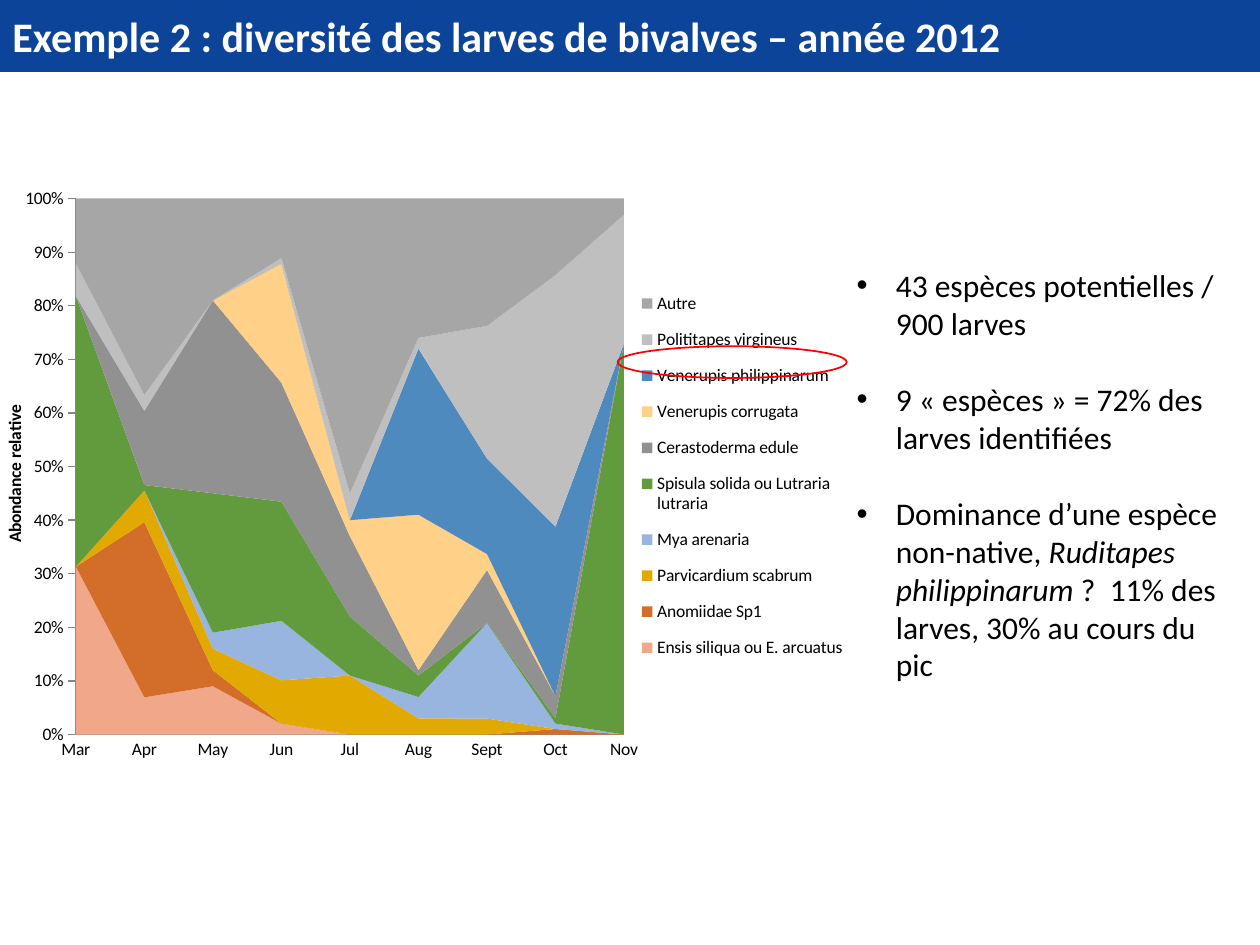
import pptx
import pptx.chart.data
import pptx.dml.color
import pptx.enum.chart
import pptx.enum.shapes
import pptx.enum.text
import pptx.oxml
import pptx.oxml.ns
import pptx.util

Cm = pptx.util.Cm
Pt = pptx.util.Pt
qn = pptx.oxml.ns.qn
SHAPES = pptx.enum.shapes.MSO_SHAPE
MIDDLE = pptx.enum.text.MSO_ANCHOR.MIDDLE
LEFT = pptx.enum.text.PP_ALIGN.LEFT


def rgb(value):
    return pptx.dml.color.RGBColor.from_string(value)


def manual_layout(x, y, w, h, inner=False):
    """Return a c:layout element; lengths are fractions of the chart."""
    target = '<c:layoutTarget val="inner"/>' if inner else ""
    return pptx.oxml.parse_xml(
        f'<c:layout {pptx.oxml.ns.nsdecls("c")}><c:manualLayout>{target}'
        '<c:xMode val="edge"/><c:yMode val="edge"/>'
        f'<c:x val="{x}"/><c:y val="{y}"/><c:w val="{w}"/><c:h val="{h}"/>'
        "</c:manualLayout></c:layout>")


deck = pptx.Presentation()
deck.slide_width, deck.slide_height = Cm(25.4), Cm(19.05)
slide = deck.slides.add_slide(deck.slide_layouts[6])

# Relative abundance per month
species = [
    ("Ensis siliqua ou E. arcuatus", "F1A78A", [31, 7, 9, 2, 0, 0, 0, 0, 0]),
    ("Anomiidae Sp1", "D26E2A", [0, 33, 3, 0, 0, 0, 0, 1, 0]),
    ("Parvicardium scabrum", "E2AA00", [0, 6, 4, 8, 11, 3, 3, 0, 0]),
    ("Mya arenaria", "97B5DF", [0, 0, 3, 11, 0, 4, 18, 1, 0]),
    ("Spisula solida ou Lutraria lutraria", "629A3E", [50, 1, 26, 22, 11, 4, 0, 1, 73]),
    ("Cerastoderma edule", "919191", [0, 14, 36, 22, 15, 1, 10, 4, 0]),
    ("Venerupis corrugata", "FFD088", [0, 0, 0, 22, 3, 29, 3, 0, 0]),
    ("Venerupis philippinarum", "4E8ABE", [0, 0, 0, 0, 0, 31, 18, 31, 0]),
    ("Polititapes virgineus", "BFBFBF", [6, 3, 0, 1, 5, 2, 25, 46, 24]),
    ("Autre", "A6A6A6", [12, 37, 19, 11, 55, 26, 24, 14, 3]),
]
abundance = pptx.chart.data.CategoryChartData()
abundance.categories = ["Mar", "Apr", "May", "Jun", "Jul", "Aug", "Sept", "Oct", "Nov"]
for name, _, shares in species:
    abundance.add_series(name, shares)
chart = slide.shapes.add_chart(
    pptx.enum.chart.XL_CHART_TYPE.AREA_STACKED_100,
    Cm(0), Cm(2.79), Cm(21.84), Cm(13.34), abundance).chart
chart.has_title = False
chart.font.name = "Calibri"
chart.font.size = Pt(10)
chart.font.color.rgb = rgb("000000")
for series, (_, color, _) in zip(chart.plots[0].series, species):
    series.format.fill.solid()
    series.format.fill.fore_color.rgb = rgb(color)

months, share = chart.category_axis, chart.value_axis
for axis in (months, share):
    axis.format.line.color.rgb = rgb("868686")
    axis.minor_tick_mark = pptx.enum.chart.XL_TICK_MARK.NONE
months.major_tick_mark = pptx.enum.chart.XL_TICK_MARK.NONE
months.has_major_gridlines = False
share.major_tick_mark = pptx.enum.chart.XL_TICK_MARK.OUTSIDE
share.has_major_gridlines = True
share.major_gridlines.format.line.color.rgb = rgb("D9D9D9")
share.minimum_scale, share.major_unit = 0, 0.1
share.tick_labels.number_format = "0%"
share.tick_labels.number_format_is_linked = False
share.axis_title.text_frame.text = "Abondance relative"
share_font = share.axis_title.text_frame.paragraphs[0].runs[0].font
share_font.name, share_font.size, share_font.bold = "Calibri", Pt(10), True
share_font.color.rgb = rgb("000000")
share_body = next(share.axis_title.element.iter(qn("a:bodyPr")))
share_body.set("rot", "-5400000")
share_body.set("vert", "horz")
for crossing in chart.element.iter(qn("c:crossBetween")):
    crossing.set("val", "midCat")

chart.has_legend = True
chart.legend.position = pptx.enum.chart.XL_LEGEND_POSITION.RIGHT
chart.legend.include_in_layout = False
plot_area = next(chart.element.iter(qn("c:plotArea")))
legend = next(chart.element.iter(qn("c:legend")))
for part in (plot_area, legend):
    for old in part.findall(qn("c:layout")):
        part.remove(old)
plot_area.insert(0, manual_layout(0.07, 0.091, 0.506, 0.81, inner=True))
legend.find(qn("c:legendPos")).addnext(manual_layout(0.585, 0.21, 0.2, 0.6))

# Findings, each a list of (text, italic)
findings = [
    [("43 espèces potentielles / 900 larves", False)],
    [("9 « espèces » = 72% des larves identifiées", False)],
    [("Dominance d’une espèce non-native, ", False),
     ("Ruditapes philippinarum ", True),
     ("?  11% des larves, 30% au cours du pic", False)],
]
comments = slide.shapes.add_shape(
    SHAPES.ROUNDED_RECTANGLE, Cm(16.59), Cm(4.78), Cm(8.81), Cm(9.58))
comments.fill.background()
comments.line.fill.background()
comments.shadow.inherit = False
comments.text_frame.word_wrap = True
comments.text_frame.vertical_anchor = MIDDLE
for index, finding in enumerate(findings):
    if index:
        paragraph = comments.text_frame.add_paragraph()
        paragraph.space_before = Pt(22)
    else:
        paragraph = comments.text_frame.paragraphs[0]
    paragraph.alignment = LEFT
    properties = paragraph._p.get_or_add_pPr()
    properties.set("marL", str(Cm(0.79)))
    properties.set("indent", str(-Cm(0.79)))
    for bullet in ('buFont {} typeface="Arial"', 'buChar {} char="•"'):
        properties.append(pptx.oxml.parse_xml(
            "<a:" + bullet.format(pptx.oxml.ns.nsdecls("a")) + "/>"))
    for text, italic in finding:
        run = paragraph.add_run()
        run.text = text
        run.font.name, run.font.size, run.font.italic = "Calibri", Pt(18), italic
        run.font.color.rgb = rgb("000000")

# Ring around the dominant species in the legend
ring = slide.shapes.add_shape(SHAPES.OVAL, Cm(12.45), Cm(6.98), Cm(4.62), Cm(0.64))
ring.fill.background()
ring.line.color.rgb = rgb("FF0000")
ring.line.width = Pt(1)
ring.shadow.inherit = False

banner = slide.shapes.add_shape(SHAPES.RECTANGLE, Cm(0), Cm(0), deck.slide_width, Cm(1.45))
banner.fill.solid()
banner.fill.fore_color.rgb = rgb("0C4499")
banner.line.fill.background()
banner.shadow.inherit = False
banner.text_frame.word_wrap = True
banner.text_frame.vertical_anchor = MIDDLE
banner.text_frame.text = "Exemple 2 : diversité des larves de bivalves – année 2012"
heading = banner.text_frame.paragraphs[0]
heading.alignment = LEFT
heading_font = heading.runs[0].font
heading_font.name, heading_font.size, heading_font.bold = "Calibri", Pt(24), True
heading_font.color.rgb = rgb("FFFFFF")

deck.save("out.pptx")
